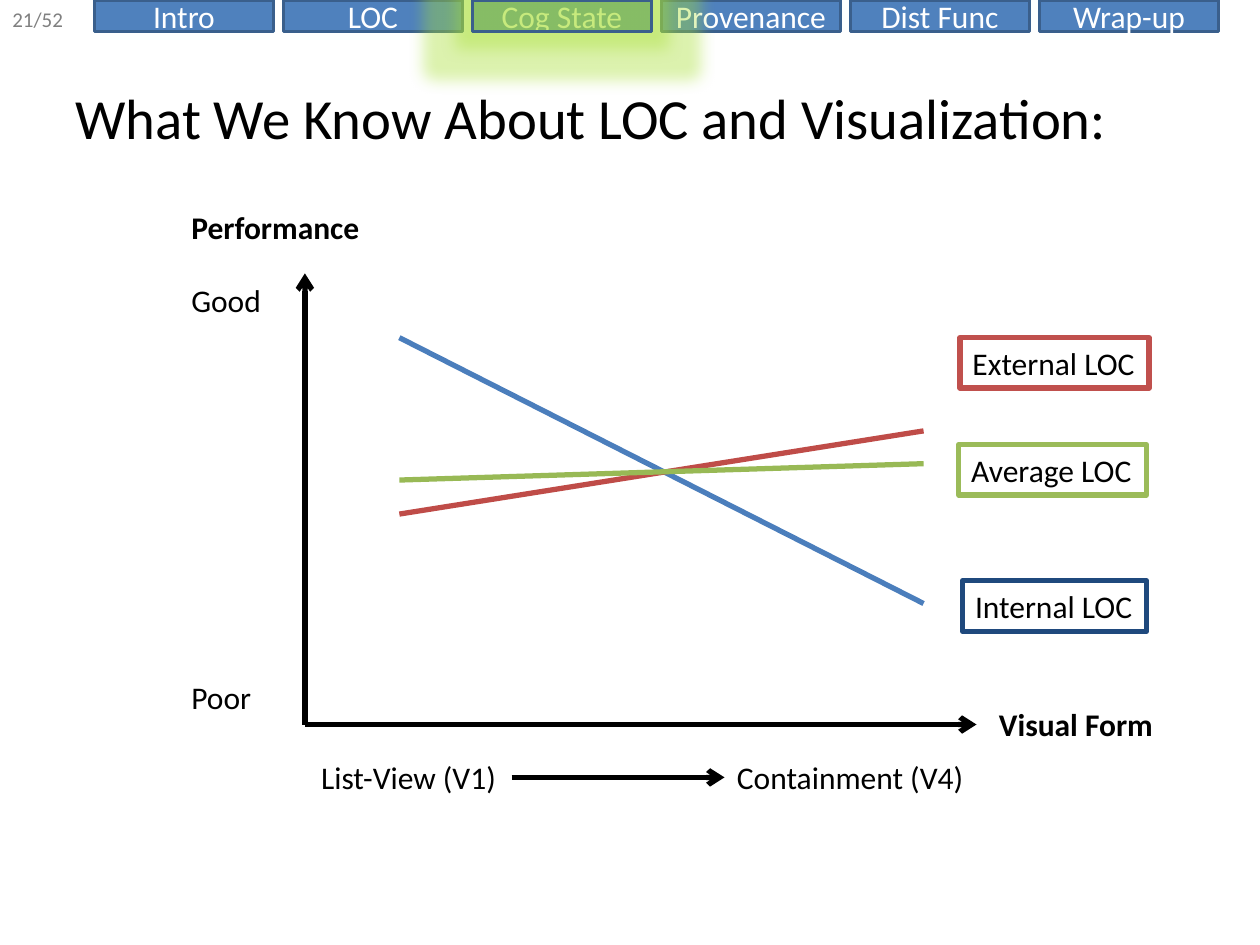
from dataclasses import dataclass

from lxml import etree
from pptx import Presentation
from pptx.dml.color import RGBColor
from pptx.enum.shapes import MSO_CONNECTOR, MSO_SHAPE
from pptx.enum.text import MSO_ANCHOR, MSO_AUTO_SIZE, PP_ALIGN
from pptx.oxml import parse_xml
from pptx.oxml.ns import nsdecls, qn
from pptx.util import Inches, Pt


@dataclass(frozen=True)
class Theme:
    font: str = "Calibri"
    black: str = "000000"
    white: str = "FFFFFF"
    gray: str = "808080"
    tab_fill: str = "4F81BD"
    tab_line: str = "3A5F8C"
    glow: str = "9BBB59"
    title_size: float = 32.4
    body_size: float = 18
    number_size: float = 12
    tab_width: float = 2
    line_width: float = 3


THEME = Theme()
TABS = ["Intro", "LOC", "Cog State", "Provenance", "Dist Func", "Wrap-up"]
CURRENT_TAB = "Cog State"

# Name, line colour, start and end heights, label colour, label box;
# all places are measured from the top left corner of the chart
SERIES = [
    ("Internal LOC", "4B7EBC", 1.08, 3.19, "1F497D", (6.22, 3.01, 1.46, 0.4)),
    ("External LOC", "BF4C48", 2.48, 1.82, "C0504D", (6.2, 1.08, 1.5, 0.4)),
    ("Average LOC", "98B955", 2.21, 2.08, "9BBB59", (6.19, 1.93, 1.49, 0.4)),
]


def color(value):
    return RGBColor.from_string(value)


def write(shape, text, size=THEME.body_size, ink=THEME.black, bold=False):
    para = shape.text_frame.paragraphs[0]
    span = para.add_run()
    span.text = text
    span.font.name = THEME.font
    span.font.size = Pt(size)
    span.font.bold = bold
    span.font.color.rgb = color(ink)
    return para


def add_label(shapes, text, left, top, width, height=0.4, **style):
    box = shapes.add_textbox(*map(Inches, (left, top, width, height)))
    box.text_frame.word_wrap = False
    box.text_frame.auto_size = MSO_AUTO_SIZE.SHAPE_TO_FIT_TEXT
    write(box, text, **style)
    return box


def add_rect(shapes, box, line, width, fill=None):
    rect = shapes.add_shape(MSO_SHAPE.RECTANGLE, *map(Inches, box))
    rect.shadow.inherit = False
    if fill:
        rect.fill.solid()
        rect.fill.fore_color.rgb = color(fill)
    else:
        rect.fill.background()
    rect.line.color.rgb = color(line)
    rect.line.width = Pt(width)
    return rect


def add_line(shapes, start, end, ink=THEME.black, arrow=False):
    line = shapes.add_connector(MSO_CONNECTOR.STRAIGHT, *map(Inches, start + end))
    line.line.color.rgb = color(ink)
    line.line.width = Pt(THEME.line_width)
    if arrow:
        etree.SubElement(line.line._get_or_add_ln(), qn("a:tailEnd"), type="arrow")
    etree.SubElement(line._element.spPr, qn("a:effectLst"))
    return line


def add_glow(shape, ink, radius):
    effects = shape._element.spPr.find(qn("a:effectLst"))
    effects.append(parse_xml(
        f'<a:glow {nsdecls("a")} rad="{Pt(radius)}"><a:srgbClr val="{ink}">'
        '<a:satMod val="175000"/><a:alpha val="40000"/></a:srgbClr></a:glow>'))


def add_navigation(page, left, top, pitch, width, height):
    for index, name in enumerate(TABS):
        tab = add_rect(page.shapes, (left + index * pitch, top, width, height),
                       THEME.tab_line, THEME.tab_width, THEME.tab_fill)
        tab.text_frame.vertical_anchor = MSO_ANCHOR.MIDDLE
        write(tab, name, ink=THEME.white).alignment = PP_ALIGN.CENTER
    add_label(page.shapes, "21/52", 0, top, 0.64, 0.3,
              size=THEME.number_size, ink=THEME.gray)

    # Glowing frame around the current section
    current = left + TABS.index(CURRENT_TAB) * pitch
    frame = add_rect(page.shapes, (current, top, width, height),
                     THEME.tab_line, THEME.tab_width)
    add_glow(frame, THEME.glow, 18)


def add_title(page, left, top, width, height):
    title = page.shapes.add_textbox(*map(Inches, (left, top, width, height)))
    title.text_frame.word_wrap = True
    title.text_frame.vertical_anchor = MSO_ANCHOR.MIDDLE
    write(title, "What We Know About LOC and Visualization:", size=THEME.title_size)


def add_chart_area(page, left, top, width, height):
    shapes = page.shapes
    axis_x, axis_y = left + 1, top + height - 0.65

    # Axes with their names and ends
    add_line(shapes, (axis_x, axis_y), (axis_x, top + 0.57), arrow=True)
    add_line(shapes, (axis_x, axis_y), (axis_x + 5.33, axis_y), arrow=True)
    add_label(shapes, "Performance", left, top, 1.55, bold=True)
    add_label(shapes, "Good", left, top + 0.58, 0.76)
    add_label(shapes, "Poor", left, axis_y - 0.42, 0.68)
    add_label(shapes, "Visual Form", left + width - 1.43, axis_y - 0.2, 1.43, bold=True)

    # Range of visual forms
    range_y = axis_y + 0.22
    first = add_label(shapes, "List-View (V1)", left + 1.03, range_y, 1.61)
    last = add_label(shapes, "Containment (V4)", left + 4.33, range_y, 2.08)
    arrow = add_line(shapes, (left + 2.64, range_y + 0.2),
                     (left + 4.33, range_y + 0.2), arrow=True)
    arrow.begin_connect(first, 3)
    arrow.end_connect(last, 1)

    # Each series is a line with its label
    for name, ink, start, end, label_ink, (x, y, w, h) in SERIES:
        group = shapes.add_group_shape().shapes
        add_line(group, (left + 1.75, top + start), (left + 5.91, top + end), ink)
        label = add_rect(group, (left + x, top + y, w, h), label_ink, THEME.line_width)
        label.text_frame.vertical_anchor = MSO_ANCHOR.TOP
        label.text_frame.word_wrap = False
        label.text_frame.auto_size = MSO_AUTO_SIZE.SHAPE_TO_FIT_TEXT
        write(label, name).alignment = PP_ALIGN.LEFT


def main():
    deck = Presentation()
    deck.slide_width, deck.slide_height = Inches(10), Inches(7.5)
    page = deck.slides.add_slide(deck.slide_layouts[6])
    add_navigation(page, 0.75, 0, 1.5, 1.42, 0.25)
    add_title(page, 0.5, 0.3, 9, 1.25)
    add_chart_area(page, 1.42, 1.6, 7.84, 4.8)
    deck.save("out.pptx")


if __name__ == "__main__":
    main()
